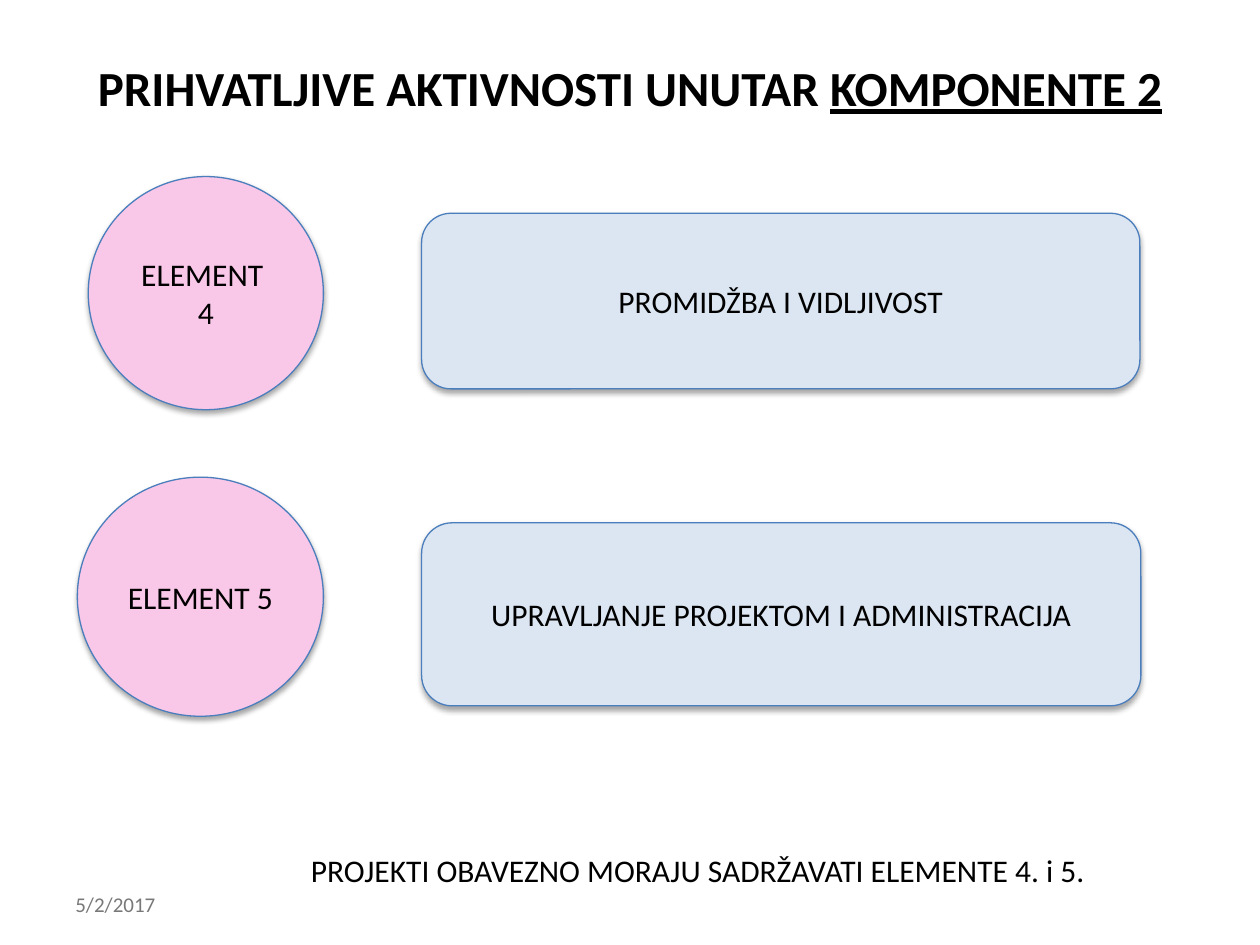
import pptx
import pptx.util
import pptx.dml.color
import pptx.enum.shapes
import pptx.enum.text
from lxml import etree
from pptx.oxml.ns import qn

Cm = pptx.util.Cm
Shapes = pptx.enum.shapes.MSO_SHAPE
Align = pptx.enum.text.PP_ALIGN
Anchor = pptx.enum.text.MSO_ANCHOR

BLACK, GREY, BLUE = "000000", "777877", "4B7EBC"
PINK, PALE_BLUE = "F9C7E8", "DCE6F2"


def color(hex_string):
    return pptx.dml.color.RGBColor.from_string(hex_string)


class SlideBuilder:
    """Holds the text style and the current slide."""

    font_name = "Calibri"

    def __init__(self, slide):
        self.slide = slide

    def style(self, run, size, ink=BLACK, **formats):
        formats = {"name": self.font_name, "size": pptx.util.Pt(size), **formats}
        for name, value in formats.items():
            setattr(run.font, name, value)
        run.font.color.rgb = color(ink)

    def fill_text(self, frame, lines, size, ink=BLACK, align=Align.LEFT):
        frame.word_wrap = True
        frame.vertical_anchor = Anchor.MIDDLE
        for index, line in enumerate(lines):
            paragraph = frame.add_paragraph() if index else frame.paragraphs[0]
            paragraph.alignment = align
            run = paragraph.add_run()
            run.text = line
            self.style(run, size, ink)

    def title(self, plain, underlined, box):
        shape = self.slide.shapes.title
        shape.left, shape.top, shape.width, shape.height = map(Cm, box)
        frame = shape.text_frame
        frame.vertical_anchor = Anchor.MIDDLE
        frame.margin_bottom = Cm(1.32)  # lifts the single line above the middle
        paragraph = frame.paragraphs[0]
        paragraph.alignment = Align.CENTER
        for text, underline in ((plain, False), (underlined, True)):
            run = paragraph.add_run()
            run.text = text
            self.style(run, 28, bold=True, underline=underline)

    def text(self, line, box, size, ink=BLACK):
        shape = self.slide.shapes.add_textbox(*map(Cm, box))
        self.fill_text(shape.text_frame, [line], size, ink)

    def panel(self, kind, lines, box, fill):
        shape = self.slide.shapes.add_shape(kind, *map(Cm, box))
        shape.fill.solid()
        shape.fill.fore_color.rgb = color(fill)
        shape.line.color.rgb = color(BLUE)
        shape.line.width = pptx.util.Pt(0.75)
        self.soft_shadow(shape)
        self.fill_text(shape.text_frame, lines, 18, align=Align.CENTER)

    def soft_shadow(self, shape):
        shape.shadow.inherit = False
        effects = shape._element.spPr.find(qn("a:effectLst"))
        shadow = etree.SubElement(
            effects, qn("a:outerShdw"), blurRad=str(pptx.util.Pt(3.1)),
            dist=str(pptx.util.Pt(1.8)), dir="5400000", rotWithShape="0")
        ink = etree.SubElement(shadow, qn("a:srgbClr"), val=BLACK)
        etree.SubElement(ink, qn("a:alpha"), val="35000")


def main():
    presentation = pptx.Presentation()
    presentation.slide_width, presentation.slide_height = Cm(25.4), Cm(19.05)
    builder = SlideBuilder(
        presentation.slides.add_slide(presentation.slide_layouts[5]))

    # Date and title
    builder.text("5/2/2017", (1.27, 17.73, 5.92, 1.01), 12, GREY)
    builder.title("PRIHVATLJIVE AKTIVNOSTI UNUTAR ", "KOMPONENTE 2",
                  (1.27, 0.76, 22.86, 3.18))

    # Element circles
    for lines, box in (
        (["ELEMENT ", "4"], (1.78, 3.56, 4.74, 4.7)),
        (["ELEMENT 5"], (1.56, 9.62, 4.96, 4.82)),
    ):
        builder.panel(Shapes.OVAL, lines, box, PINK)

    # Activity boxes
    for line, box in (
        ("PROMIDŽBA I VIDLJIVOST", (8.5, 4.3, 14.48, 3.54)),
        ("UPRAVLJANJE PROJEKTOM I ADMINISTRACIJA", (8.5, 10.54, 14.5, 3.69)),
    ):
        builder.panel(Shapes.ROUNDED_RECTANGLE, [line], box, PALE_BLUE)

    # Closing note
    builder.text("PROJEKTI OBAVEZNO MORAJU SADRŽAVATI ELEMENTE 4. i 5.",
                 (6.02, 17.02, 16.99, 1.03), 18)

    presentation.save("out.pptx")


if __name__ == "__main__":
    main()
